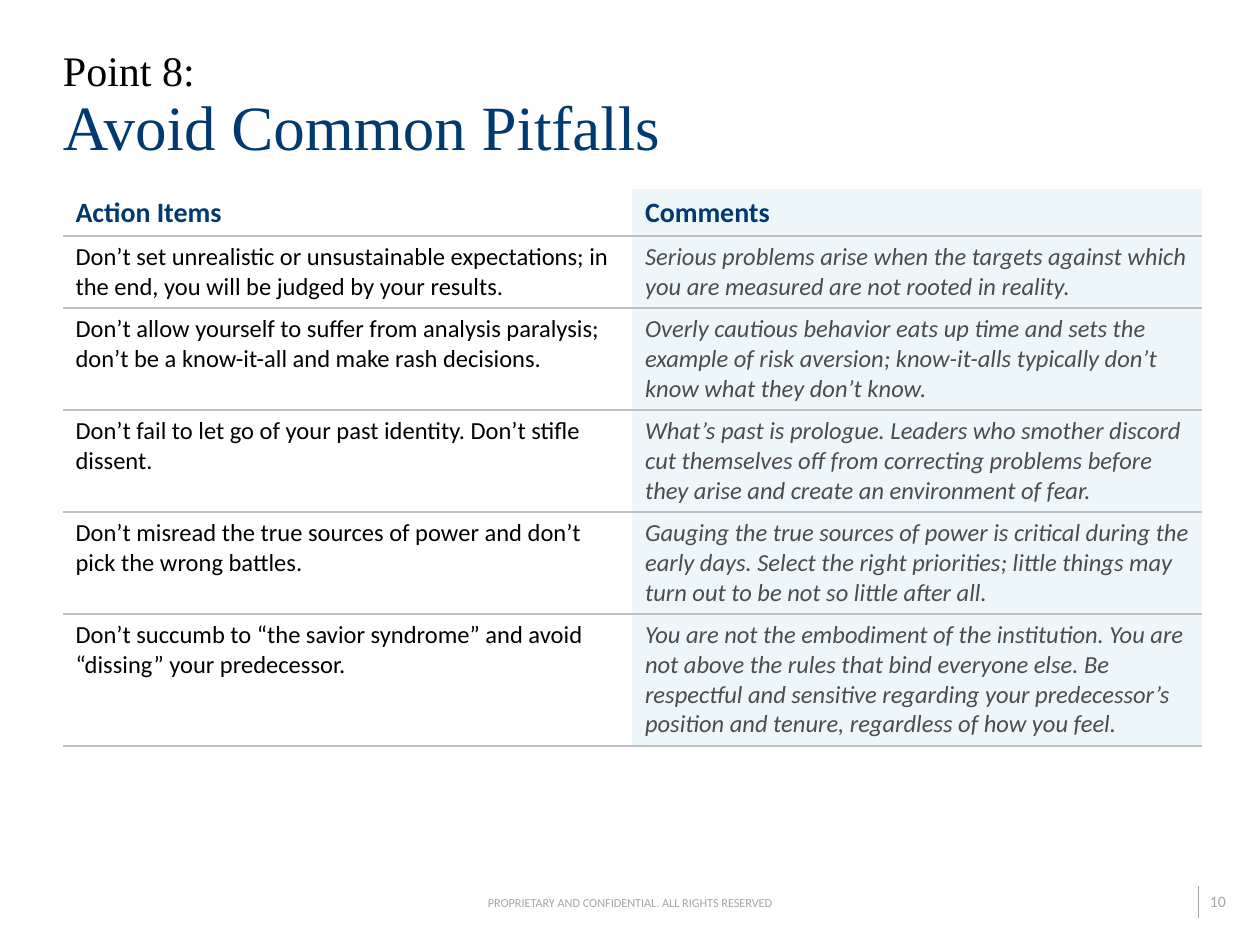
from lxml.etree import SubElement
from pptx import Presentation
from pptx.dml.color import RGBColor
from pptx.enum.shapes import MSO_CONNECTOR
from pptx.enum.text import MSO_ANCHOR, PP_ALIGN
from pptx.oxml.ns import qn
from pptx.util import Emu, Pt

PX_PER_INCH = 126
NAVY = RGBColor(0x00, 0x3A, 0x70)
BLACK = RGBColor(0x00, 0x00, 0x00)
CHARCOAL = RGBColor(0x4C, 0x4C, 0x4E)
WHITE = RGBColor(0xFF, 0xFF, 0xFF)
PALE_BLUE = RGBColor(0xED, 0xF6, 0xF8)
RULE_GREY = RGBColor(0xBF, 0xBF, 0xBF)
FOOTER_GREY = RGBColor(0xA6, 0xA6, 0xA6)
DIVIDER_GREY = RGBColor(0xA8, 0xA3, 0xAB)

HEADINGS = ("Action Items", "Comments")
PITFALLS = [
    ("Don’t set unrealistic or unsustainable expectations; in the end, you will be judged by your results.",
     "Serious problems arise when the targets against which you are measured are not rooted in reality."),
    ("Don’t allow yourself to suffer from analysis paralysis; don’t be a know-it-all and make rash decisions.",
     "Overly cautious behavior eats up time and sets the example of risk aversion; "
     "know-it-alls typically don’t know what they don’t know."),
    ("Don’t fail to let go of your past identity. Don’t stifle dissent.",
     "What’s past is prologue. Leaders who smother discord cut themselves off from correcting "
     "problems before they arise and create an environment of fear."),
    ("Don’t misread the true sources of power and don’t pick the wrong battles.",
     "Gauging the true sources of power is critical during the early days. Select the right "
     "priorities; little things may turn out to be not so little after all."),
    ("Don’t succumb to “the savior syndrome” and avoid “dissing” your predecessor.",
     "You are not the embodiment of the institution. You are not above the rules that bind everyone "
     "else. Be respectful and sensitive regarding your predecessor’s position and tenure, "
     "regardless of how you feel."),
]
ROW_HEIGHTS = (47, 72, 102, 102, 102, 132)


def px(length):
    return Emu(round(length * 914400 / PX_PER_INCH))


def write(paragraph, text, size, color, font="Calibri", bold=False, italic=False):
    run = paragraph.add_run()
    run.text = text
    run.font.name = font
    run.font.size = Pt(size)
    run.font.color.rgb = color
    run.font.bold = bold
    run.font.italic = italic


def add_frame(slide, left, top, width, height, insets, anchor=MSO_ANCHOR.TOP, wrap=False):
    """Add an empty text box; insets run left, top, right, bottom."""
    frame = slide.shapes.add_textbox(px(left), px(top), px(width), px(height)).text_frame
    frame.margin_left, frame.margin_top, frame.margin_right, frame.margin_bottom = map(px, insets)
    frame.vertical_anchor = anchor
    frame.word_wrap = wrap
    return frame


def add_title(slide, left, top, width, height):
    frame = add_frame(slide, left, top, width, height, (0, 6, 0, 6), MSO_ANCHOR.BOTTOM, wrap=True)
    title = frame.paragraphs[0]
    title.line_spacing = 0.9
    write(title, "Point 8:", size=24, color=BLACK, font="Times New Roman")
    title.add_line_break()
    write(title, "Avoid Common Pitfalls", size=36, color=NAVY, font="Times New Roman")


def rule_cell(cell, is_header):
    """Rule a cell below, and above unless it is in the header row."""
    properties = cell._tc.get_or_add_tcPr()
    for side in "LRTB":
        border = SubElement(properties, qn(f"a:ln{side}"), w=str(Pt(1)))
        if side == "B" or (side == "T" and not is_header):
            fill = SubElement(border, qn("a:solidFill"))
            SubElement(fill, qn("a:srgbClr"), val=str(RULE_GREY))
        else:
            SubElement(border, qn("a:noFill"))


def add_pitfall_table(slide, left, top, width):
    rows = [HEADINGS, *PITFALLS]
    table = slide.shapes.add_table(len(rows), len(HEADINGS), px(left), px(top),
                                   px(width), px(sum(ROW_HEIGHTS))).table
    table.first_row = table.horz_banding = False
    for row, height in zip(table.rows, ROW_HEIGHTS):
        row.height = px(height)
    for r, texts in enumerate(rows):
        is_header = r == 0
        for c, text in enumerate(texts):
            is_comment = c == 1
            cell = table.cell(r, c)
            rule_cell(cell, is_header)
            cell.fill.solid()
            cell.fill.fore_color.rgb = PALE_BLUE if is_comment else WHITE
            paragraph = cell.text_frame.paragraphs[0]
            if is_header:
                cell.vertical_anchor = MSO_ANCHOR.MIDDLE
                write(paragraph, text, size=16, color=NAVY, bold=True)
            else:
                write(paragraph, text, size=14, color=CHARCOAL if is_comment else BLACK,
                      italic=is_comment)


def add_footer(slide, left, top, width, height):
    """Centre the notice in the box and put the page number at its right end."""
    notice = add_frame(slide, left + (width - 288) // 2, top + 9, 288, 15,
                       (0, 0, 0, 0), MSO_ANCHOR.MIDDLE).paragraphs[0]
    notice.alignment = PP_ALIGN.CENTER
    write(notice, "PROPRIETARY AND CONFIDENTIAL. ALL RIGHTS RESERVED", size=7, color=FOOTER_GREY)

    number_left = left + width - 63
    number = add_frame(slide, number_left, top, 50, height, (13, 6, 0, 6)).paragraphs[0]
    write(number, "10", size=9, color=FOOTER_GREY)

    divider_x = px(number_left + 1)
    divider = slide.shapes.add_connector(MSO_CONNECTOR.STRAIGHT, divider_x, px(top),
                                         divider_x, px(top + height))
    divider.line.color.rgb = DIVIDER_GREY
    divider.line.width = Pt(0.5)
    SubElement(divider._element.spPr, qn("a:effectLst"))


def main():
    deck = Presentation()
    deck.slide_width, deck.slide_height = px(1260), px(945)
    slide = deck.slides.add_slide(deck.slide_layouts[6])
    add_footer(slide, 0, 886, 1260, 32)
    add_title(slide, 63, 32, 1134, 138)
    add_pitfall_table(slide, 63, 189, 1139)
    deck.save("out.pptx")


if __name__ == "__main__":
    main()
